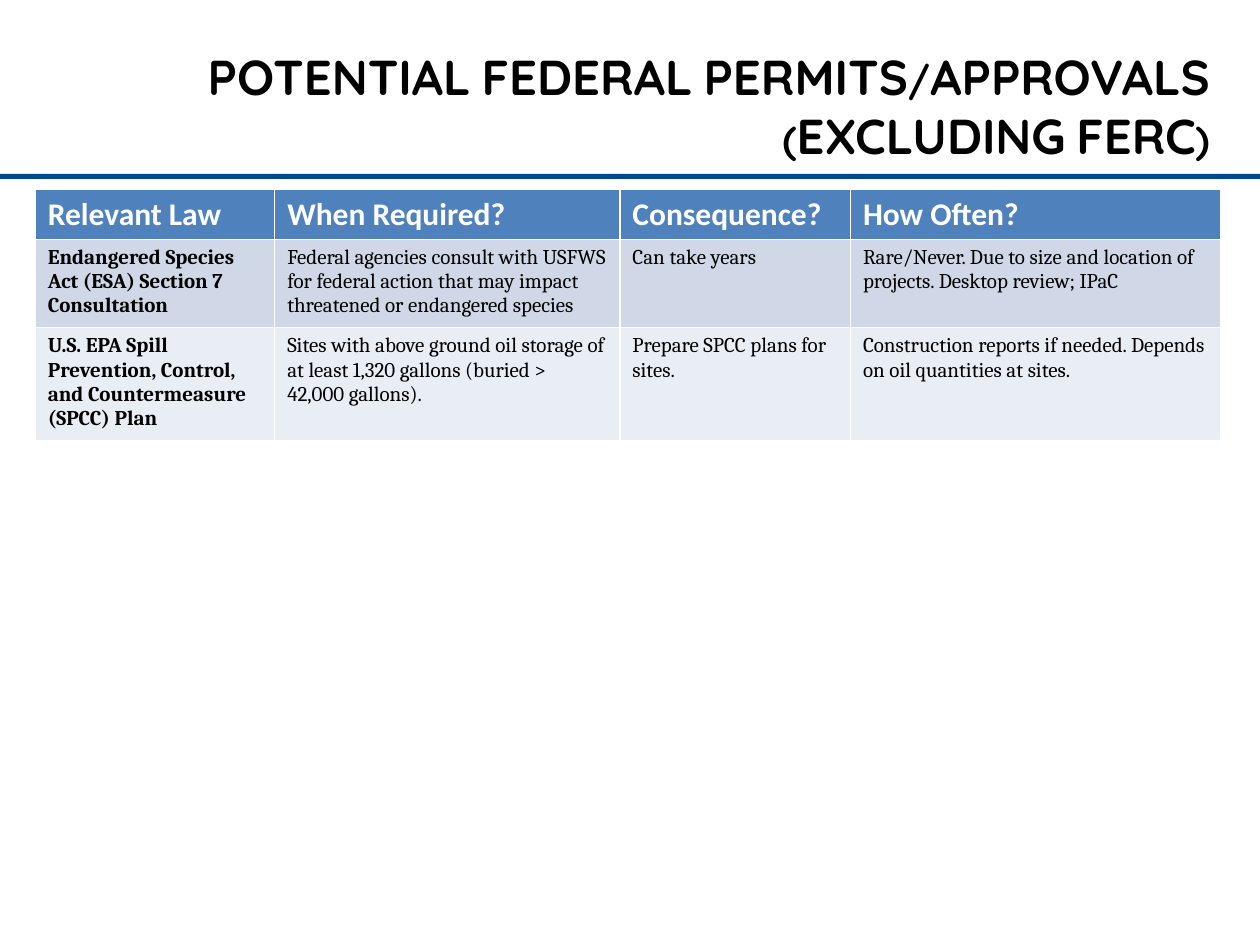
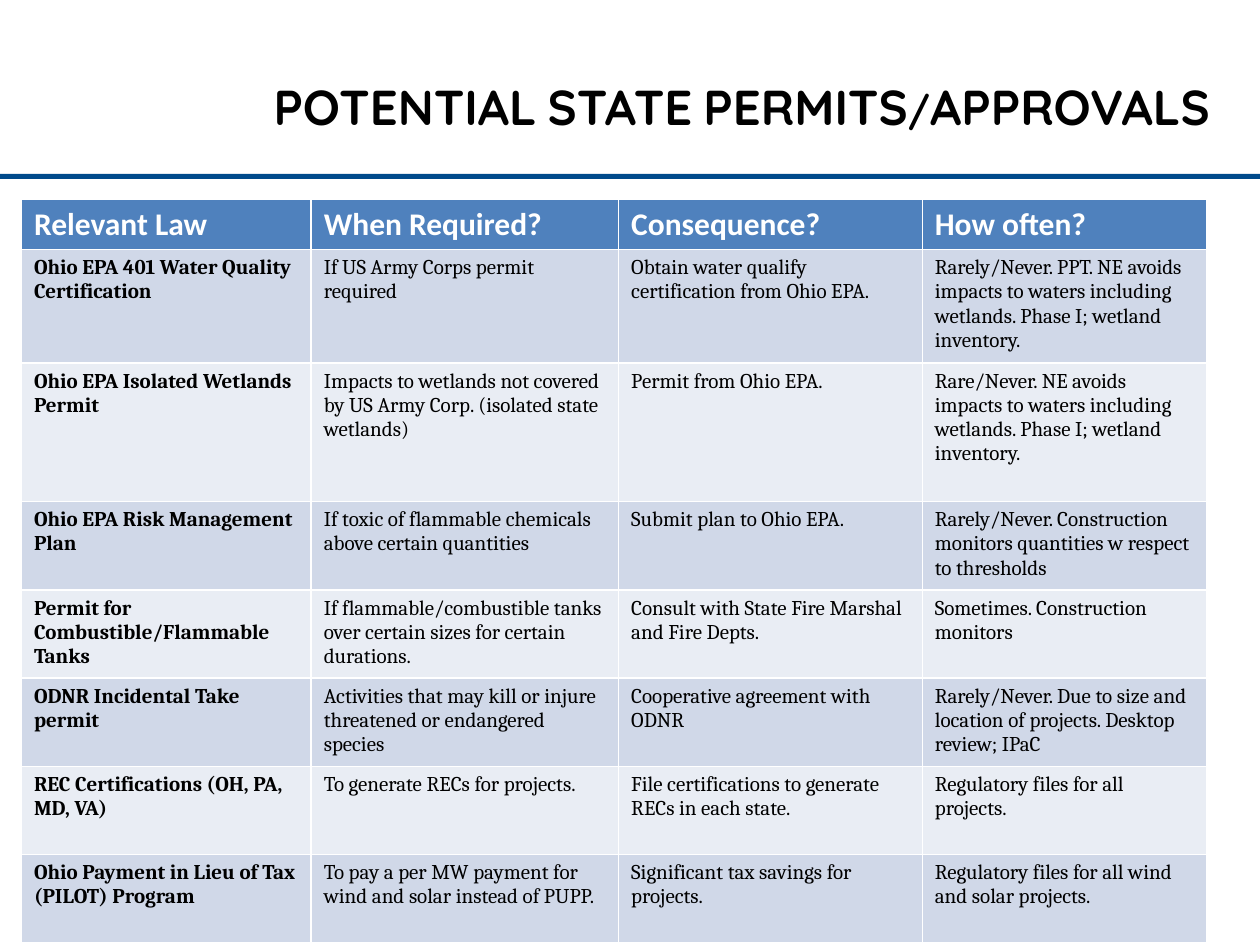
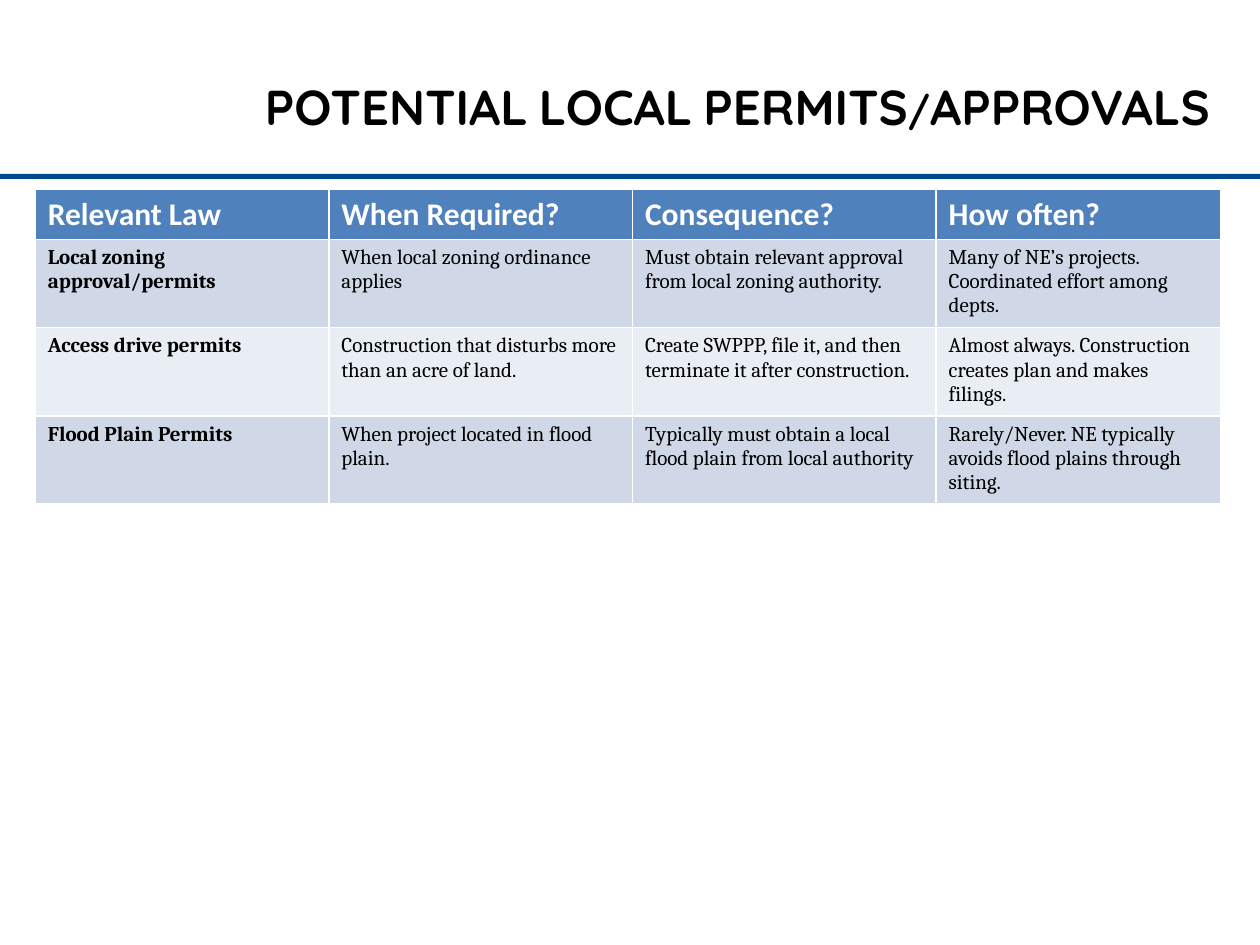
import pptx
import pptx.util
import pptx.dml.color
import pptx.enum.shapes
import pptx.enum.text

Inches = pptx.util.Inches
Pt = pptx.util.Pt
RGBColor = pptx.dml.color.RGBColor

# Shared look
BLACK = RGBColor(0x00, 0x00, 0x00)
WHITE = RGBColor(0xFF, 0xFF, 0xFF)
RULE_BLUE = RGBColor(0x00, 0x4A, 0x8B)
HEADER_BLUE = RGBColor(0x4F, 0x81, 0xBD)
BANDS = [RGBColor(0xD0, 0xD8, 0xE8), RGBColor(0xE9, 0xED, 0xF4)]
TITLE_FONT, HEADER_FONT, BODY_FONT = "Quicksand", "Calibri", "Cambria"
TITLE_MIDDLE = 0.84
HEADINGS = ["Relevant Law", "When Required?", "Consequence?"]

# Table contents
FEDERAL = [
    HEADINGS + ["How Often?"],
    ["Endangered Species Act (ESA) Section 7 Consultation",
     "Federal agencies consult with USFWS for federal action that may impact "
     "threatened or endangered species",
     "Can take years",
     "Rare/Never. Due to size and location of projects. Desktop review; IPaC"],
    ["U.S. EPA Spill Prevention, Control, and Countermeasure (SPCC) Plan",
     "Sites with above ground oil storage of at least 1,320 gallons "
     "(buried > 42,000 gallons).",
     "Prepare SPCC plans for sites.",
     "Construction reports if needed. Depends on oil quantities at sites."],
]

STATE = [
    HEADINGS + ["How often?"],
    ["Ohio EPA 401 Water Quality Certification",
     "If US Army Corps permit required",
     "Obtain water qualify certification from Ohio EPA.",
     "Rarely/Never. PPT. NE avoids impacts to waters including wetlands. "
     "Phase I; wetland inventory."],
    ["Ohio EPA Isolated Wetlands Permit",
     "Impacts to wetlands not covered by US Army Corp. (isolated state wetlands)",
     "Permit from Ohio EPA.",
     "Rare/Never. NE avoids impacts to waters including wetlands. "
     "Phase I; wetland inventory."],
    ["Ohio EPA Risk Management Plan",
     "If toxic of flammable chemicals above certain quantities",
     "Submit plan to Ohio EPA.",
     "Rarely/Never. Construction monitors quantities w respect to thresholds"],
    ["Permit for Combustible/Flammable Tanks",
     "If flammable/combustible tanks over certain sizes for certain durations.",
     "Consult with State Fire Marshal and Fire Depts.",
     "Sometimes. Construction monitors"],
    ["ODNR Incidental Take permit",
     "Activities that may kill or injure threatened or endangered species",
     "Cooperative agreement with ODNR",
     "Rarely/Never. Due to size and location of projects. Desktop review; IPaC"],
    ["REC Certifications (OH, PA, MD, VA)",
     "To generate RECs for projects.",
     "File certifications to generate RECs in each state.",
     "Regulatory files for all projects."],
    ["Ohio Payment in Lieu of Tax (PILOT) Program",
     "To pay a per MW payment for wind and solar instead of PUPP.",
     "Significant tax savings for projects.",
     "Regulatory files for all wind and solar projects."],
]

LOCAL = [
    HEADINGS + ["How often?"],
    ["Local zoning approval/permits",
     "When local zoning ordinance applies",
     "Must obtain relevant approval from local zoning authority.",
     "Many of NE’s projects. Coordinated effort among depts."],
    ["Access drive permits",
     "Construction that disturbs more than an acre of land.",
     "Create SWPPP, file it, and then terminate it after construction.",
     "Almost always. Construction creates plan and makes filings."],
    ["Flood Plain Permits",
     "When project located in flood plain.",
     "Typically must obtain a local flood plain from local authority",
     "Rarely/Never. NE typically avoids flood plains through siting."],
]


def style_font(font, name, size, color, bold):
    font.name = name
    font.size = Pt(size)
    font.color.rgb = color
    font.bold = bold


def add_rule(page):
    rule = page.shapes.add_shape(pptx.enum.shapes.MSO_SHAPE.RECTANGLE,
                                 Inches(0), Inches(1.38), Inches(10), Inches(0.04))
    rule.shadow.inherit = False
    rule.fill.solid()
    rule.fill.fore_color.rgb = RULE_BLUE
    rule.line.fill.background()


def add_title(page, text, lines):
    height = 0.1 + 0.47 * lines
    box = page.shapes.add_textbox(Inches(0.5), Inches(TITLE_MIDDLE - height / 2),
                                  Inches(9.2), Inches(height))
    frame = box.text_frame
    frame.word_wrap = True
    frame.auto_size = pptx.enum.text.MSO_AUTO_SIZE.SHAPE_TO_FIT_TEXT
    frame.vertical_anchor = pptx.enum.text.MSO_ANCHOR.MIDDLE
    para = frame.paragraphs[0]
    para.alignment = pptx.enum.text.PP_ALIGN.RIGHT
    span = para.add_run()
    span.text = text
    style_font(span.font, TITLE_FONT, 28, BLACK, True)
    span.font._element.set("cap", "small")


def fill_cell(cell, text, row, column):
    cell.fill.solid()
    cell.text = text
    font = cell.text_frame.paragraphs[0].font
    if row == 0:
        cell.fill.fore_color.rgb = HEADER_BLUE
        style_font(font, HEADER_FONT, 18, WHITE, True)
    else:
        cell.fill.fore_color.rgb = BANDS[(row - 1) % 2]
        style_font(font, BODY_FONT, 12, BLACK, column == 0)


def add_permit_table(page, left, top, widths, heights, rows):
    # The default table style supplies the white cell borders
    table = page.shapes.add_table(len(rows), len(widths), Inches(left), Inches(top),
                                  Inches(sum(widths)), Inches(sum(heights))).table
    for column, width in zip(table.columns, widths):
        column.width = Inches(width)
    for table_row, height in zip(table.rows, heights):
        table_row.height = Inches(height)
    for r, texts in enumerate(rows):
        for c, text in enumerate(texts):
            fill_cell(table.cell(r, c), text, r, c)


def add_permit_page(deck, title, lines, left, top, widths, heights, rows):
    page = deck.slides.add_slide(deck.slide_layouts[6])
    add_rule(page)
    add_title(page, title, lines)
    add_permit_table(page, left, top, widths, heights, rows)


def main():
    deck = pptx.Presentation()
    deck.slide_width = Inches(10)
    deck.slide_height = Inches(7.5)

    add_permit_page(deck, "POTENTIAL FEDERAL PERMITS/APPROVALS (EXCLUDING FERC)", 2,
                    0.28, 1.5, [1.9, 2.74, 1.83, 2.94], [0.39, 0.7, 0.9], FEDERAL)
    add_permit_page(deck, "POTENTIAL STATE PERMITS/APPROVALS", 1,
                    0.17, 1.58, [2.3, 2.44, 2.41, 2.26],
                    [0.39, 0.9, 1.1] + [0.7] * 5, STATE)
    add_permit_page(deck, "POTENTIAL LOCAL PERMITS/APPROVALS", 1,
                    0.28, 1.5, [2.33, 2.41, 2.41, 2.26], [0.39] + [0.7] * 3, LOCAL)

    deck.save("out.pptx")


if __name__ == "__main__":
    main()
